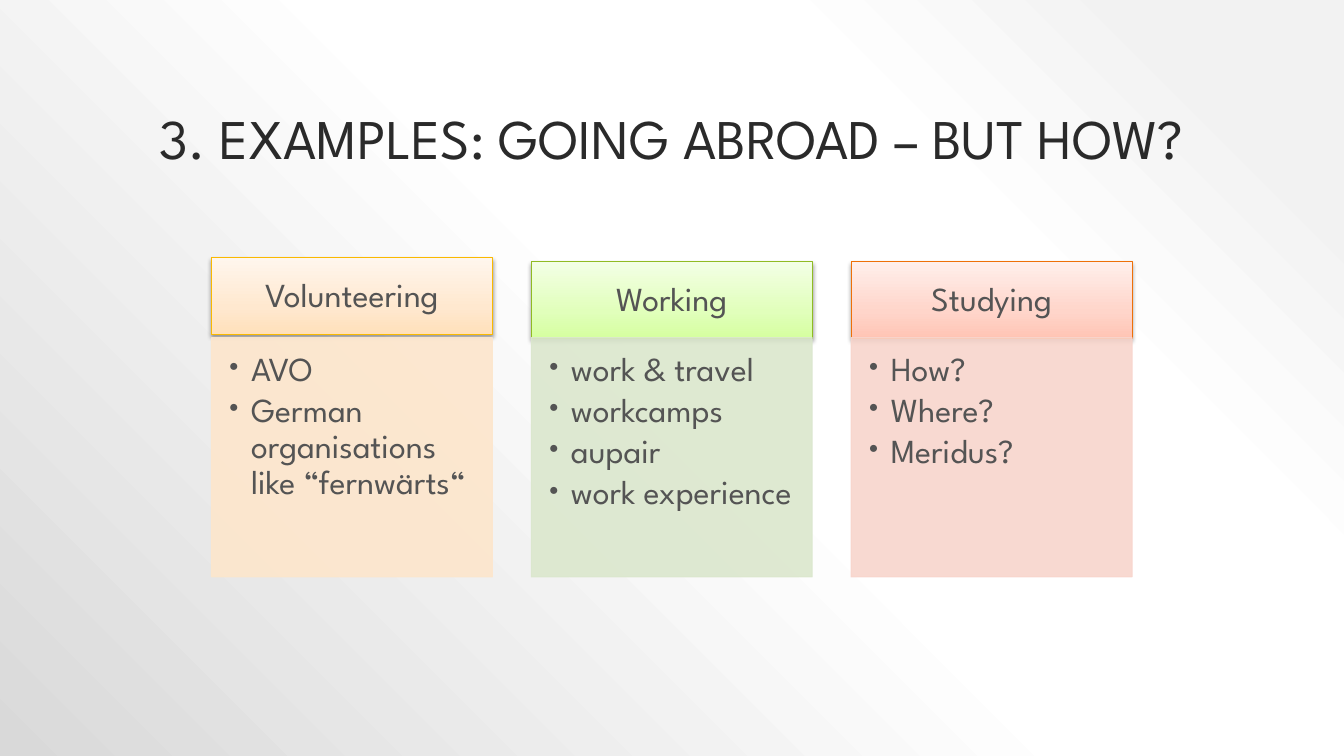
"""Build the slide on ways of going abroad: volunteering, working, studying."""
import lxml.etree
import pptx
import pptx.dml.color
import pptx.enum.shapes
import pptx.enum.text
import pptx.oxml
import pptx.oxml.ns
import pptx.util

Cm, Pt = pptx.util.Cm, pptx.util.Pt
PP_ALIGN, MSO_ANCHOR = pptx.enum.text.PP_ALIGN, pptx.enum.text.MSO_ANCHOR
RECTANGLE = pptx.enum.shapes.MSO_SHAPE.RECTANGLE
NAMESPACE = pptx.oxml.ns.nsdecls("a")
FONT = "League Spartan"


def color(hex_string):
    return pptx.dml.color.RGBColor.from_string(hex_string)


def paint_gradient(owner, stops, direction):
    gradient = owner.xpath(".//a:gradFill")[0]
    marks = "".join(
        f'<a:gs pos="{place * 1000}"><a:srgbClr val="{shade}"/></a:gs>' for place, shade in stops
    )
    gradient.getparent().replace(gradient, pptx.oxml.parse_xml(
        f'<a:gradFill {NAMESPACE} rotWithShape="1"><a:gsLst>{marks}</a:gsLst>{direction}</a:gradFill>'
    ))


deck = pptx.Presentation()
deck.slide_width, deck.slide_height = Cm(33.87), Cm(19.05)
page = deck.slides.add_slide(deck.slide_layouts[5])
page.background.fill.gradient()
paint_gradient(
    page._element,
    [(10, "F2F2F2"), (28, "FFFFFF"), (48, "FFFFFF"), (100, "D9D9D9")],
    '<a:path path="circle"><a:fillToRect l="100000" b="100000"/></a:path>',
)

title = page.shapes.title
title.left, title.top, title.width, title.height = Cm(0), Cm(0.76), Cm(33.87), Cm(3.68)
title.text_frame.text = "3. EXAMPLES: GOING ABROAD – BUT HOW?"
title.text_frame.auto_size = pptx.enum.text.MSO_AUTO_SIZE.NONE
title.text_frame.vertical_anchor = MSO_ANCHOR.BOTTOM
para = title.text_frame.paragraphs[0]
para.alignment, para.line_spacing = PP_ALIGN.CENTER, 0.9
para.font.name, para.font.size = FONT, Pt(40)
para.font.color.rgb = color("2A2A2A")

columns = [
    ("Volunteering", 6.5, ("FFE0BA", "FFE8CF", "FFF6ED"), "FAB900", "FDE6CC",
     ["AVO", "German organisations like “fernwärts“"]),
    ("Working", 6.6, ("D5FF9F", "E1FFBB", "F3FFE5"), "90BB23", "DBE7CD",
     ["work & travel", "workcamps", "aupair", "work experience"]),
    ("Studying", 6.6, ("FFC4B4", "FFD5CA", "FFEFEB"), "EE7008", "F8D5CC",
     ["How?", "Where?", "Meridus?"]),
]

for index, (heading, top, shades, edge, tint, examples) in enumerate(columns):
    left = Cm(5.33 + index * 8.06)

    header = page.shapes.add_shape(RECTANGLE, left, Cm(top), Cm(7.08), Cm(1.93))
    header.fill.gradient()
    paint_gradient(header._element, zip((0, 35, 100), shades), '<a:lin ang="16200000" scaled="1"/>')
    header.line.color.rgb = color(edge)
    header.shadow.inherit = False
    header._element.xpath("./p:spPr/a:effectLst")[0].append(pptx.oxml.parse_xml(
        f'<a:outerShdw {NAMESPACE} blurRad="{Pt(3.1)}" dist="{Pt(1.6)}" dir="5400000" '
        'rotWithShape="0"><a:srgbClr val="000000"><a:alpha val="38000"/></a:srgbClr></a:outerShdw>'
    ))
    header.text_frame.text = heading
    header.text_frame.vertical_anchor = MSO_ANCHOR.MIDDLE
    header.text_frame.paragraphs[0].alignment = PP_ALIGN.CENTER

    body = page.shapes.add_shape(RECTANGLE, left, Cm(8.51), Cm(7.08), Cm(6.03))
    body.fill.solid()
    body.fill.fore_color.rgb = color(tint)
    body.line.color.rgb = color(tint)
    body.shadow.inherit = False
    for shade in body._element.xpath("./p:spPr//a:srgbClr"):
        lxml.etree.SubElement(shade, pptx.oxml.ns.qn("a:alpha"), val="90000")
    frame = body.text_frame
    frame.text = "\n".join(examples)
    frame.vertical_anchor = MSO_ANCHOR.TOP
    frame.margin_left, frame.margin_top = Cm(0.36), Cm(0.36)
    frame.margin_right, frame.margin_bottom = Cm(0.48), Cm(0.53)
    for para in frame.paragraphs:
        para.level = 1
        para.alignment = PP_ALIGN.LEFT
        para.space_after = Pt(3.6)
        settings = para._p.get_or_add_pPr()
        settings.set("marL", str(Cm(0.64)))
        settings.set("indent", str(-Cm(0.64)))
        lxml.etree.SubElement(settings, pptx.oxml.ns.qn("a:buFont"), typeface=FONT)
        lxml.etree.SubElement(settings, pptx.oxml.ns.qn("a:buChar"), char="•")

    for box in (header, body):
        box.line.width = Pt(0.75)
        box.text_frame.word_wrap = True
        for para in box.text_frame.paragraphs:
            para.line_spacing = 0.9
            para.font.name, para.font.size = FONT, Pt(24)
            para.font.color.rgb = color("545454")

deck.save("out.pptx")
